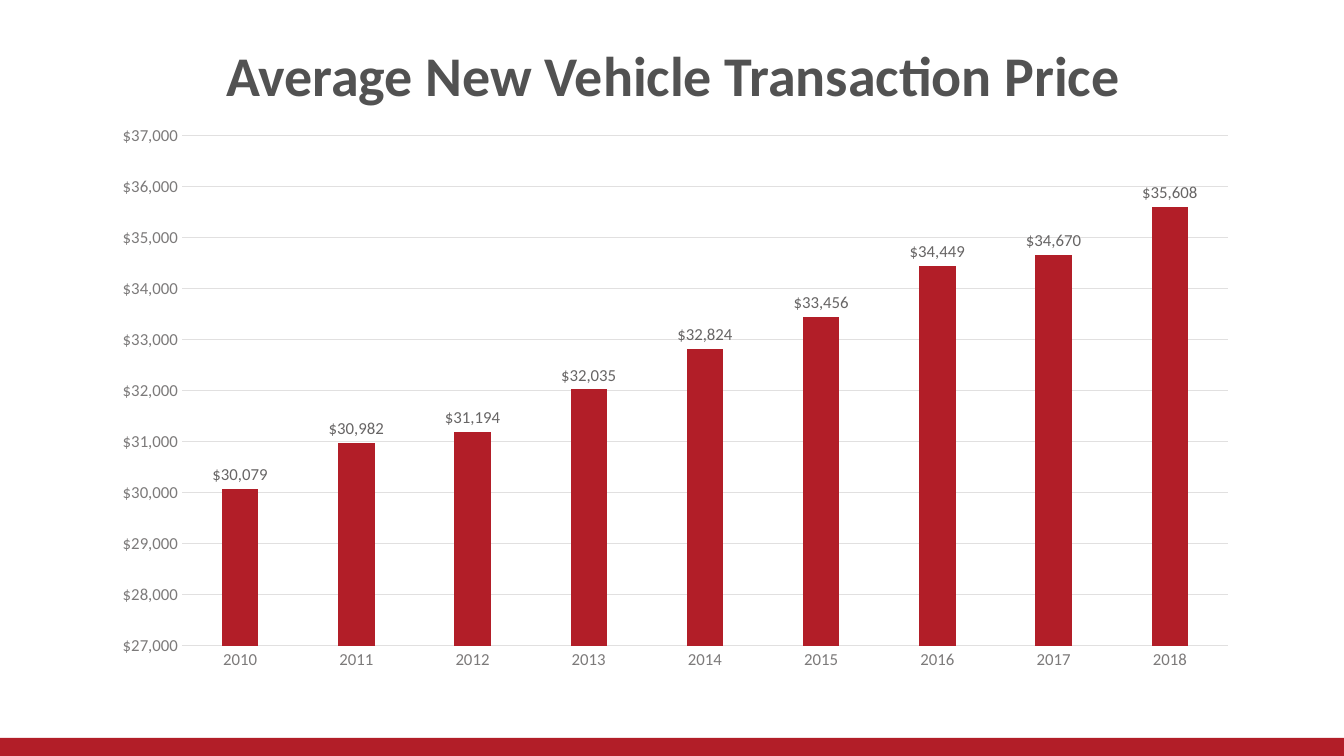
from dataclasses import dataclass

from lxml import etree
from pptx import Presentation
from pptx.chart.data import CategoryChartData
from pptx.dml.color import RGBColor
from pptx.enum.chart import XL_CHART_TYPE as ChartType
from pptx.enum.chart import XL_LABEL_POSITION as LabelPosition
from pptx.enum.chart import XL_TICK_MARK as TickMark
from pptx.enum.shapes import MSO_SHAPE as Shape
from pptx.enum.text import MSO_ANCHOR as Anchor
from pptx.enum.text import PP_ALIGN as Align
from pptx.oxml.ns import qn
from pptx.util import Emu, Pt

PAGE = (1344, 756)
EMU_PER_PX = 12192000 / PAGE[0]
DOLLARS = '"$"#,##0'
PRICES = {
    "2010": 30079, "2011": 30982, "2012": 31194,
    "2013": 32035, "2014": 32824, "2015": 33456,
    "2016": 34449, "2017": 34670, "2018": 35608,
}


@dataclass(frozen=True)
class Theme:
    font: str = "Calibri"
    red: str = "B21E28"
    title: str = "525252"
    text: str = "343333"
    axis: str = "7C7A7A"
    label: str = "676565"
    grid: str = "E1E0E0"
    title_size: int = 40
    chart_size: int = 10
    label_size: int = 12
    line_width: float = 0.75


THEME = Theme()


def px(length):
    return Emu(round(length * EMU_PER_PX))


def place(box):
    return [px(length) for length in box]


def set_values(target, values):
    for name, value in values.items():
        setattr(target, name, value)


def set_font(font, size, color, bold=False):
    set_values(font, {"name": THEME.font, "size": Pt(size), "bold": bold})
    font.color.rgb = RGBColor.from_string(color)


def set_fill(fill, color):
    fill.solid()
    fill.fore_color.rgb = RGBColor.from_string(color)


def set_line(line, color):
    set_fill(line.fill, color)
    line.width = Pt(THEME.line_width)


def add_footer_band(page, box):
    band = page.shapes.add_shape(Shape.RECTANGLE, *place(box))
    band.shadow.inherit = False
    set_fill(band.fill, THEME.red)
    band.line.fill.background()


def add_title(page, box, text):
    frame = page.shapes.add_textbox(*place(box)).text_frame
    set_values(frame, {"word_wrap": True, "vertical_anchor": Anchor.MIDDLE})
    para = frame.paragraphs[0]
    para.alignment = Align.CENTER
    span = para.add_run()
    span.text = text
    set_font(span.font, THEME.title_size, THEME.title, bold=True)


def set_plot_area(chart, box, plot_box):
    """Fix the inner plot area, given in px relative to the chart box."""
    area = chart.element.find(".//" + qn("c:plotArea"))
    layout = area.find(qn("c:layout"))
    if layout is None:
        layout = etree.Element(qn("c:layout"))
        area.insert(0, layout)
    manual = etree.SubElement(layout, qn("c:manualLayout"))
    left, top, width, height = plot_box
    values = {
        "layoutTarget": "inner", "xMode": "edge", "yMode": "edge",
        "x": left / box[2], "y": top / box[3],
        "w": width / box[2], "h": height / box[3],
    }
    for name, value in values.items():
        etree.SubElement(manual, qn("c:" + name)).set("val", str(value))


def add_price_chart(page, box, prices):
    data = CategoryChartData(number_format=DOLLARS)
    data.categories = list(prices)
    data.add_series("Series 1", list(prices.values()))
    chart = page.shapes.add_chart(
        ChartType.COLUMN_CLUSTERED, *place(box), data).chart
    set_values(chart, {"has_title": False, "has_legend": False})
    set_font(chart.font, THEME.chart_size, THEME.text)
    set_plot_area(chart, box, (89, 21, box[2] - 113, box[3] - 55))

    # Axes
    for axis in (chart.category_axis, chart.value_axis):
        set_values(axis, {"major_tick_mark": TickMark.NONE,
                          "minor_tick_mark": TickMark.NONE})
        set_font(axis.tick_labels.font, THEME.label_size, THEME.axis)
    set_line(chart.category_axis.format.line, THEME.grid)
    value_axis = chart.value_axis
    set_values(value_axis, {"minimum_scale": 27000, "maximum_scale": 37000,
                            "major_unit": 1000, "has_major_gridlines": True})
    set_values(value_axis.tick_labels, {"number_format": DOLLARS,
                                        "number_format_is_linked": False})
    value_axis.format.line.fill.background()
    set_line(value_axis.major_gridlines.format.line, THEME.grid)

    # Columns and their labels
    plot = chart.plots[0]
    set_values(plot, {"gap_width": 219, "overlap": -27,
                      "vary_by_categories": False})
    series = plot.series[0]
    set_fill(series.format.fill, THEME.red)
    labels = series.data_labels
    set_values(labels, {"show_value": True, "number_format": DOLLARS,
                        "number_format_is_linked": False,
                        "position": LabelPosition.OUTSIDE_END})
    set_font(labels.font, THEME.label_size, THEME.label)


def main():
    deck = Presentation()
    deck.slide_width, deck.slide_height = place(PAGE)
    page = deck.slides.add_slide(deck.slide_layouts[6])
    add_footer_band(page, (-9, 738, 1353, 31))
    add_title(page, (68, 34, 1210, 81), "Average New Vehicle Transaction Price")
    add_price_chart(page, (93, 115, 1159, 565), PRICES)
    deck.save("out.pptx")


if __name__ == "__main__":
    main()
